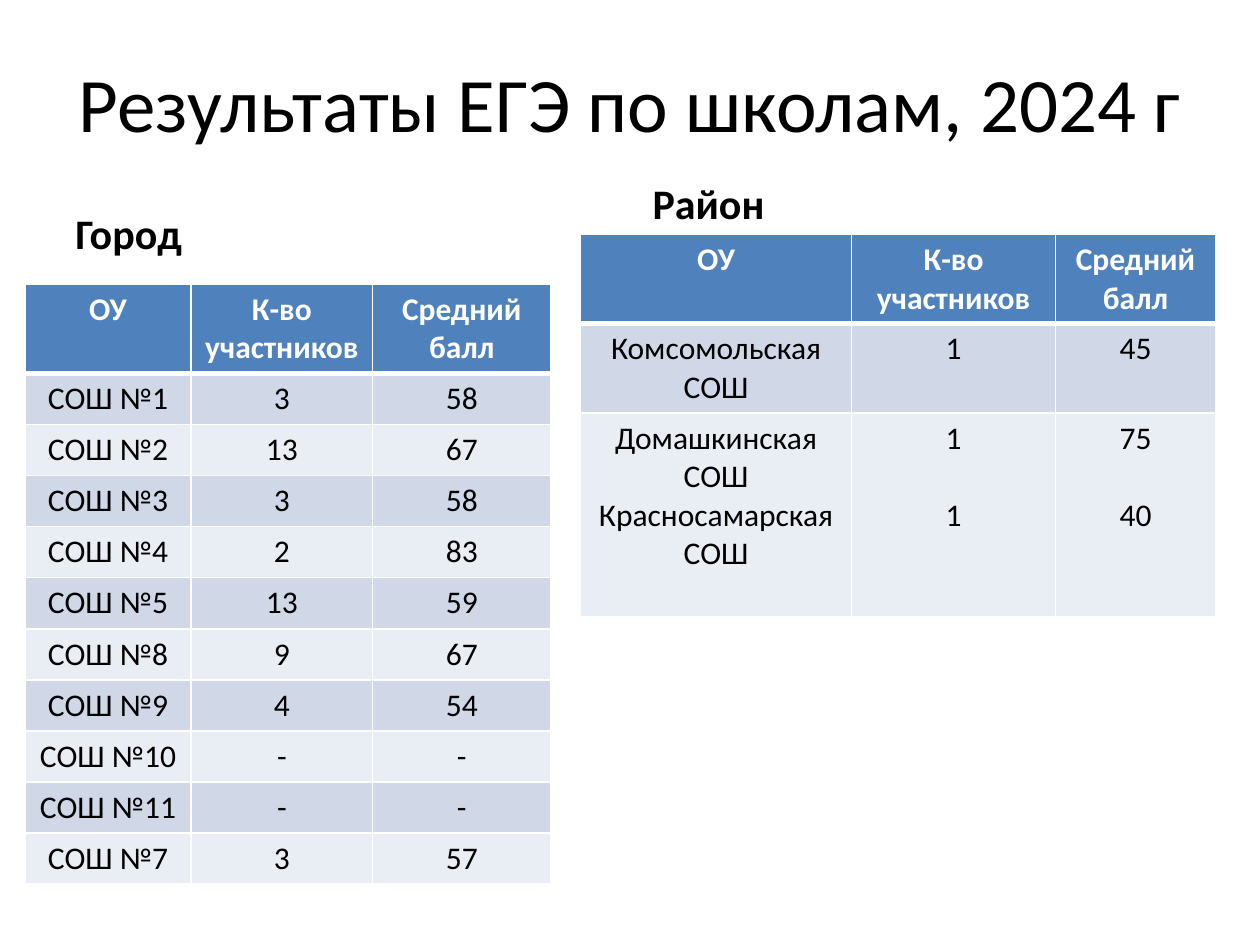
from dataclasses import dataclass

from lxml.etree import SubElement
from pptx import Presentation
from pptx.dml.color import RGBColor
from pptx.enum.text import MSO_ANCHOR, PP_ALIGN
from pptx.oxml.ns import qn
from pptx.util import Pt

BLACK = RGBColor(0x00, 0x00, 0x00)
WHITE = RGBColor(0xFF, 0xFF, 0xFF)
HEADER_BLUE = RGBColor(0x4F, 0x81, 0xBD)
BANDS = (RGBColor(0xD0, 0xD8, 0xE8), RGBColor(0xE9, 0xED, 0xF4))
FONT = "Calibri"
LINE = 22
HEADER = ("ОУ", "К-во участников", "Средний балл")


@dataclass(frozen=True)
class Label:
    """A text box with its place and format."""
    text: str
    box: tuple[float, float, float, float]
    size: float
    bold: bool
    align: PP_ALIGN
    anchor: MSO_ANCHOR
    before: float = 0


@dataclass(frozen=True)
class ResultTable:
    """Exam results of one group of schools."""
    left: float
    top: float
    widths: tuple[float, ...]
    heights: tuple[float, ...]
    rows: tuple[tuple[str, ...], ...]
    gap: float = 0


LABELS = (
    Label("Результаты ЕГЭ по школам, 2024 г", (36, 21.6, 648, 72.7), 44, False,
          PP_ALIGN.CENTER, MSO_ANCHOR.MIDDLE),
    Label("Город", (36, 100, 318.2, 51.2), 24, True,
          PP_ALIGN.LEFT, MSO_ANCHOR.BOTTOM, 4.8),
    Label("Район", (365.8, 100, 318.2, 33.8), 24, True,
          PP_ALIGN.LEFT, MSO_ANCHOR.BOTTOM, 4.8),
)

TABLES = (
    ResultTable(14.2, 162.3, (95, 103.7, 102), (51,) + (29.2,) * 10, (
        ("СОШ №1", "3", "58"),
        ("СОШ №2", "13", "67"),
        ("СОШ №3", "3", "58"),
        ("СОШ №4", "2", "83"),
        ("СОШ №5", "13", "59"),
        ("СОШ №8", "9", "67"),
        ("СОШ №9", "4", "54"),
        ("СОШ №10", "-", "-"),
        ("СОШ №11", "-", "-"),
        ("СОШ №7", "3", "57"),
    )),
    ResultTable(331.8, 133.9, (154.8, 116.6, 91.4), (51, 51, 116.5), (
        ("Комсомольская СОШ", "1", "45"),
        ("Домашкинская СОШ\nКрасносамарская СОШ", "1\n1", "75\n40"),
    ), gap=LINE),
)


def write_text(tf, text: str, *, size: float = 18, bold: bool = False,
               color: RGBColor = BLACK, align: PP_ALIGN = PP_ALIGN.CENTER,
               before: float = 0, gap: float = 0) -> None:
    """Write one paragraph per line, with a gap between paragraphs."""
    for i, line in enumerate(text.split("\n")):
        p = tf.add_paragraph() if i else tf.paragraphs[0]
        p.alignment = align
        p.space_before = Pt(gap if i else before)
        r = p.add_run()
        r.text = line
        r.font.name, r.font.size, r.font.bold = FONT, Pt(size), bold
        r.font.color.rgb = color


def add_label(s, label: Label) -> None:
    """Add a text box to the slide."""
    tf = s.shapes.add_textbox(*map(Pt, label.box)).text_frame
    tf.word_wrap = True
    tf.vertical_anchor = label.anchor
    write_text(tf, label.text, size=label.size, bold=label.bold,
               align=label.align, before=label.before)


def set_borders(cell, top: float, bottom: float) -> None:
    """Give a cell white borders, placed ahead of its fill."""
    tc_pr = cell._tc.get_or_add_tcPr()
    sides = (("L", 1), ("R", 1), ("T", top), ("B", bottom))
    for i, (side, width) in enumerate(sides):
        ln = SubElement(tc_pr, qn(f"a:ln{side}"), w=str(Pt(width)))
        fill = SubElement(ln, qn("a:solidFill"))
        SubElement(fill, qn("a:srgbClr"), val=str(WHITE))
        tc_pr.insert(i, ln)


def add_results(s, results: ResultTable) -> None:
    """Add a table with a header row and banded school rows."""
    rows = (HEADER, *results.rows)
    table = s.shapes.add_table(
        len(rows), len(HEADER), Pt(results.left), Pt(results.top),
        Pt(sum(results.widths)), Pt(sum(results.heights))).table
    for column, width in zip(table.columns, results.widths):
        column.width = Pt(width)
    for i, (row, height, values) in enumerate(zip(table.rows, results.heights, rows)):
        row.height = Pt(height)
        header = i == 0
        for j, (cell, value) in enumerate(zip(row.cells, values)):
            cell.fill.solid()
            cell.fill.fore_color.rgb = HEADER_BLUE if header else BANDS[(i - 1) % 2]
            set_borders(cell, 3 if i == 1 else 1, 3 if header else 1)
            write_text(cell.text_frame, value, bold=header,
                       color=WHITE if header else BLACK,
                       gap=results.gap if j else 0)


def main() -> None:
    """Build the slide and save it."""
    prs = Presentation()
    prs.slide_width, prs.slide_height = Pt(720), Pt(540)
    s = prs.slides.add_slide(prs.slide_layouts[6])
    for label in LABELS:
        add_label(s, label)
    for results in TABLES:
        add_results(s, results)
    prs.save("out.pptx")


if __name__ == "__main__":
    main()
